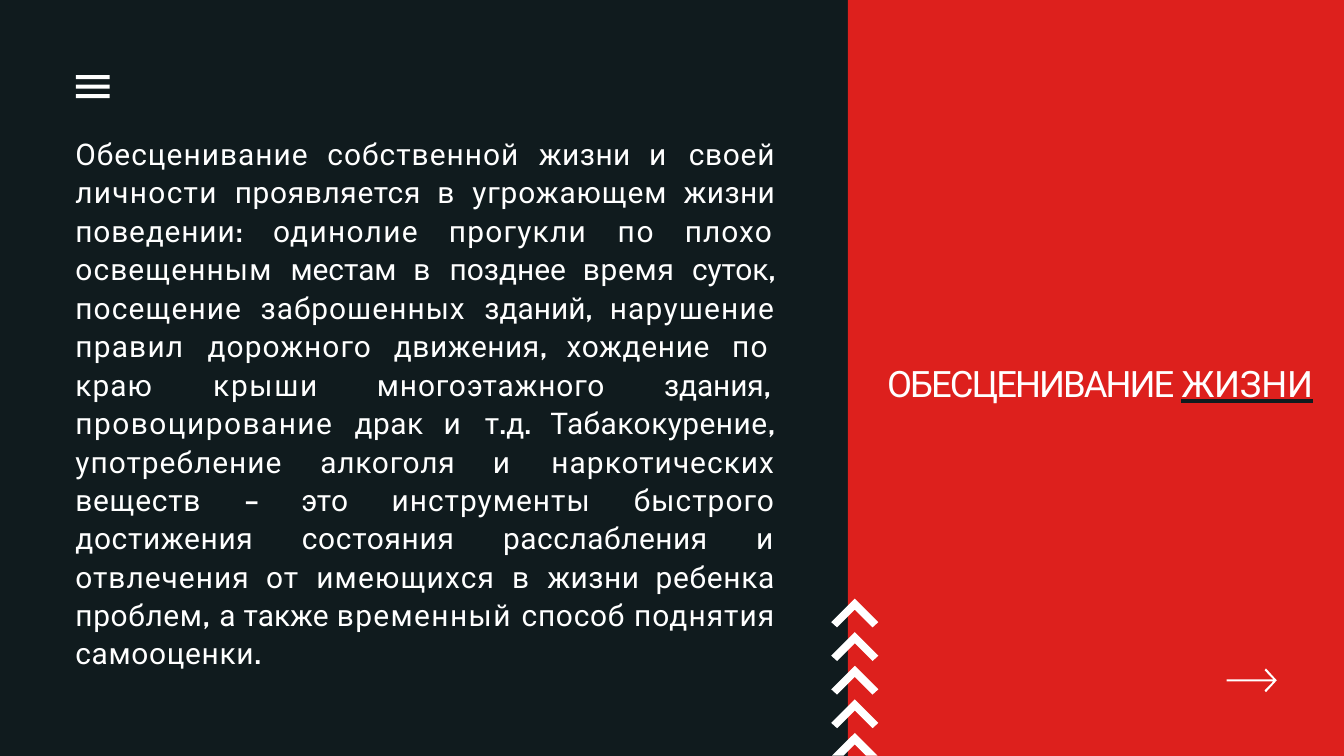
"""Builds a two-panel slide on the devaluation of life."""
from itertools import groupby

from lxml import etree
from pptx import Presentation
from pptx.dml.color import RGBColor
from pptx.enum.shapes import MSO_SHAPE
from pptx.enum.text import MSO_ANCHOR, MSO_AUTO_SIZE, MSO_UNDERLINE, PP_ALIGN
from pptx.oxml.ns import qn
from pptx.util import Cm, Pt

RECTANGLE = MSO_SHAPE.RECTANGLE
TOP = MSO_ANCHOR.TOP
NO_FIT = MSO_AUTO_SIZE.NONE
LEFT, JUSTIFY = PP_ALIGN.LEFT, PP_ALIGN.JUSTIFY
HEAVY = MSO_UNDERLINE.HEAVY_LINE

COLORS = {"dark": "101B1E", "red": "DD201D", "white": "FFFFFF"}
TEXT_FONT, MARK_FONT = "Roboto", "Cabin"
MARKS = ".,:–"
TITLE_ONLY = 5
WIDTH, HEIGHT, SPLIT = 50.8, 28.58, 32.05

HEADING = [("ОБЕСЦЕНИВАНИЕ ", -2.1), ("ЖИЗНИ", -0.2)]

BLOCKS = [
    (5.0, 4.45, JUSTIFY, [7.47, 14.12, 20.5, 23.04], [
        ("Обесценивание собственной ", 1.1), ("жизни ", 0.5), ("и ", 2.6),
        ("своей ", 0.8), ("личности ", 1.4), ("проявляется ", 0.7), ("в ", 1.4),
        ("угрожающем ", 0.9), ("жизни ", 0.4), ("поведении:\t", 0.9),
        ("одинолие\t", 1.4), ("прогукли\t", 1.3), ("по\t", 1.8), ("плохо", 1.1)]),
    (9.37, 4.45, JUSTIFY, [5.0, 12.04, 18.57, 24.82], [
        ("освещенным ", 1.2), ("местам ", 0), ("в ", 1.4), ("позднее ", 0),
        ("время ", 0.8), ("суток, ", -0.1), ("посещение ", 1.2),
        ("заброшенных ", 1.1), ("зданий, ", 0), ("нарушение правил\t", 1.3),
        ("дорожного\t", 1.1), ("движения,\t", 0.6), ("хождение\t", 0.7),
        ("по", 1.6)]),
    (13.82, 1.42, LEFT, [5.21, 11.4, 22.25], [
        ("краю\t", 1.1), ("крыши\t", 1.8), ("многоэтажного\t", 0.9),
        ("здания,", -0.1)]),
    (15.19, 10.26, JUSTIFY, [], [
        ("провоцирование ", 1.6), ("драк ", 0.6), ("и ", 2.6), ("т.д. ", 0),
        ("Табакокурение, ", 0.5), ("употребление ", 1.1), ("алкоголя ", 0.8),
        ("и ", 2.6), ("наркотических ", 1.1), ("веществ ", 0.8), ("– ", -4.3),
        ("это ", 0.6), ("инструменты быстрого ", 1.1), ("достижения ", 0.7),
        ("состояния ", 0.8), ("расслабления ", 0.6), ("и ", 2.1),
        ("отвлечения от ", 1.1), ("имеющихся ", 1.3), ("в ", 1.4),
        ("жизни ", 0.5), ("ребенка ", 0.8), ("проблем, ", 0.7),
        ("а также ", 0), ("временный ", 1.5), ("способ ", 0.8),
        ("поднятия ", 1.1), ("самооценки.", 0.7)]),
]


class Page:
    """Holds the style and the current slide."""

    def __init__(self, deck):
        self.slide = deck.slides.add_slide(deck.slide_layouts[TITLE_ONLY])
        self.shapes = self.slide.shapes

    def paint(self, shape, color):
        shape.shadow.inherit = False
        shape.fill.solid()
        shape.fill.fore_color.rgb = RGBColor.from_string(COLORS[color])
        shape.line.fill.background()

    def panel(self, left, width, color):
        box = self.shapes.add_shape(RECTANGLE, Cm(left), 0, Cm(width), Cm(HEIGHT))
        self.paint(box, color)

    def outline(self, contours, color):
        contours = [[(Cm(x), Cm(y)) for x, y in points] for points in contours]
        builder = self.shapes.build_freeform(*contours[0][0])
        builder.add_line_segments(contours[0][1:])
        for start, *rest in contours[1:]:
            builder.move_to(*start)
            builder.add_line_segments(rest)
        self.paint(builder.convert_to_shape(), color)

    def spans(self, para, pieces, size):
        for text, spacing in pieces:
            for is_mark, letters in groupby(text, lambda letter: letter in MARKS):
                span = para.add_run()
                span.text = "".join(letters)
                span.font.size = Pt(size)
                span.font.bold = is_mark
                span.font.name = MARK_FONT if is_mark else TEXT_FONT
                span.font.color.rgb = RGBColor.from_string(COLORS["white"])
                span.font._element.set("spc", str(round(spacing * 100)))

    def fill_text(self, box, pieces, size, align, before):
        frame = box.text_frame
        frame.word_wrap = True
        frame.auto_size = NO_FIT
        frame.vertical_anchor = TOP
        frame.margin_left = frame.margin_top = Cm(0.03)
        frame.margin_right = frame.margin_bottom = 0
        para = frame.paragraphs[0]
        para.alignment = align
        para.space_before = Pt(before)
        self.spans(para, pieces, size)
        return para

    def heading(self, left, top, width, height, pieces):
        box = self.shapes.title
        self.shapes._spTree.append(box._element)
        box.left, box.top, box.width, box.height = map(Cm, (left, top, width, height))
        para = self.fill_text(box, pieces, 39, LEFT, 0.9)
        span = para.runs[-1]
        span.font.underline = HEAVY
        latin = span.font._element.find(qn("a:latin"))
        line = etree.Element(qn("a:uFill"))
        solid = etree.SubElement(line, qn("a:solidFill"))
        etree.SubElement(solid, qn("a:srgbClr"), val=COLORS["dark"])
        latin.addprevious(line)

    def block(self, top, height, align, tabs, pieces):
        box = self.shapes.add_textbox(Cm(2.82), Cm(top), Cm(26.49), Cm(height))
        para = self.fill_text(box, pieces, 32, align, 1)
        if align == JUSTIFY:
            para.line_spacing = 1.07
        if tabs:
            stops = etree.SubElement(para._p.get_or_add_pPr(), qn("a:tabLst"))
            for stop in tabs:
                etree.SubElement(stops, qn("a:tab"), pos=str(Cm(stop)), algn="l")


def menu_bar(top):
    return [(2.87, top), (4.14, top), (4.14, top + 0.15), (2.87, top + 0.15)]


def chevron(top, reach, inner, foot, notch):
    offsets = [(-reach, reach), (0, 0), (reach, reach),
               (inner, foot), (0, notch), (-inner, foot)]
    return [(32.31 + x, top + y) for x, y in offsets]


def arrow(middle):
    upper = [(46.36, -0.04), (48.13, -0.04), (47.8, -0.38), (47.85, -0.45)]
    lower = [(x, -y) for x, y in reversed(upper)]
    return [(x, middle + y) for x, y in upper + [(48.26, 0)] + lower]


def main():
    deck = Presentation()
    deck.slide_width, deck.slide_height = Cm(WIDTH), Cm(HEIGHT)
    page = Page(deck)
    page.panel(0, SPLIT, "dark")
    page.panel(SPLIT, WIDTH - SPLIT, "red")
    page.heading(33.5, 13.61, 17.07, 1.73, HEADING)
    bars = [menu_bar(2.84 + 0.36 * row) for row in range(3)]
    chevrons = [chevron(22.63 + 1.27 * row, 0.89, 0.67, 1.09, 0.42) for row in range(4)]
    cut_chevron = chevron(27.71, 0.86, 0.43, 0.86, 0.43)
    page.outline([*bars, *chevrons, cut_chevron, arrow(25.72)], "white")
    for block in BLOCKS:
        page.block(*block)
    deck.save("out.pptx")


if __name__ == "__main__":
    main()
